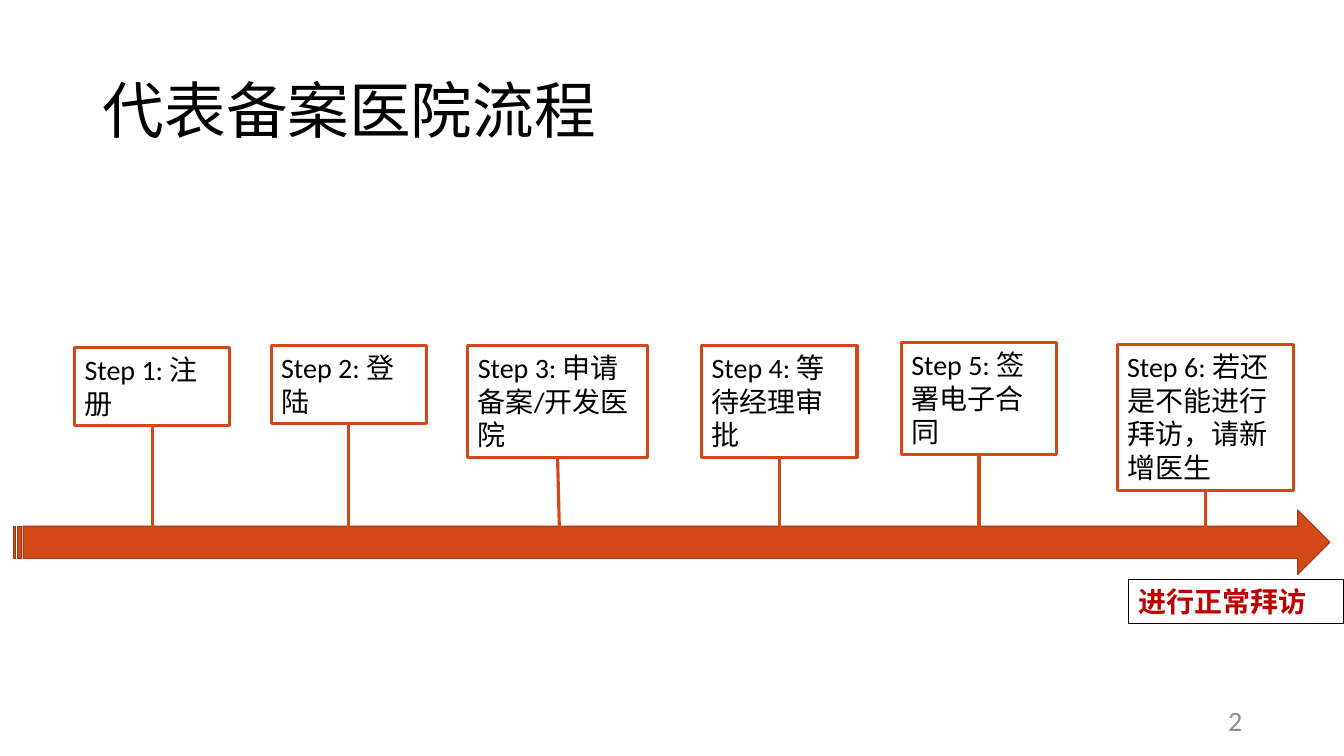
from lxml.etree import SubElement
from pptx import Presentation
from pptx.dml.color import RGBColor
from pptx.enum.shapes import MSO_CONNECTOR, MSO_SHAPE
from pptx.enum.text import MSO_ANCHOR, PP_ALIGN
from pptx.oxml.ns import qn
from pptx.util import Inches, Pt

WIDTH, HEIGHT = 13.33, 7.5
ORANGE, DARK_ORANGE, RED = "D34817", "9C3511", "C00000"
BLACK, WHITE, GREY = "000000", "FFFFFF", "8C8C8C"
LINE_HEIGHT, BOX_PADDING = 0.34, 0.09

# Text, left, top, width, lines of text, sideways lean of the stem
STEPS = [
    ("Step 1: 注册", 0.74, 3.45, 1.54, 2, 0),
    ("Step 2: 登陆", 2.69, 3.43, 1.54, 2, 0),
    ("Step 3: 申请备案/开发医院", 4.64, 3.43, 1.78, 3, 0.02),
    ("Step 4: 等待经理审批", 6.96, 3.43, 1.54, 3, 0),
    ("Step 5: 签署电子合同", 8.94, 3.4, 1.54, 3, 0),
    ("Step 6: 若还是不能进行拜访，请新增医生", 11.08, 3.42, 1.75, 4, 0),
]


def colour(value):
    return RGBColor.from_string(value)


def write(shape, text, size=20, ink=BLACK, bold=False, align=PP_ALIGN.LEFT,
          anchor=MSO_ANCHOR.TOP, spacing=None):
    frame = shape.text_frame
    frame.word_wrap = True
    frame.vertical_anchor = anchor
    para = frame.paragraphs[0]
    para.alignment = align
    para.line_spacing = spacing
    span = para.add_run()
    span.text = text
    span.font.name = "Calibri"
    span.font.size = Pt(size)
    span.font.bold = bold
    span.font.color.rgb = colour(ink)


def add_block(page, box, kind=MSO_SHAPE.RECTANGLE, fill=None, line=BLACK, weight=0.75):
    shape = page.shapes.add_shape(kind, *map(Inches, box))
    shape.shadow.inherit = False
    if fill:
        shape.fill.solid()
        shape.fill.fore_color.rgb = colour(fill)
    else:
        shape.fill.background()
    shape.line.color.rgb = colour(line)
    shape.line.width = Pt(weight)
    return shape


def add_stem(page, start, end):
    stem = page.shapes.add_connector(MSO_CONNECTOR.STRAIGHT, *map(Inches, start + end))
    stem.line.color.rgb = colour(ORANGE)
    stem.line.width = Pt(2.25)
    SubElement(stem._element.spPr, qn("a:effectLst"))


def add_title(page, box, text):
    title = page.shapes.title
    title.left, title.top, title.width, title.height = map(Inches, box)
    write(title, text, size=44, anchor=MSO_ANCHOR.MIDDLE, spacing=0.9)


def add_timeline(page, box, steps):
    left, top, width, height = box
    add_block(page, box, MSO_SHAPE.STRIPED_RIGHT_ARROW, ORANGE, DARK_ORANGE)
    # Each step hangs on a stem that ends inside the arrow
    foot = top + height * 0.4
    for text, step_left, step_top, step_width, lines, lean in steps:
        step_height = BOX_PADDING + lines * LINE_HEIGHT
        middle = step_left + step_width / 2
        add_stem(page, (middle, step_top + step_height), (middle + lean, foot))
        step = add_block(page, (step_left, step_top, step_width, step_height),
                         fill=WHITE, line=ORANGE, weight=2.25)
        write(step, text)


def add_outcome(page, box, text):
    write(add_block(page, box), text, ink=RED, bold=True)


def add_page_number(page, box, number):
    write(page.shapes.add_textbox(*map(Inches, box)), number, ink=GREY,
          align=PP_ALIGN.RIGHT, anchor=MSO_ANCHOR.MIDDLE)


def main():
    deck = Presentation()
    deck.slide_width, deck.slide_height = Inches(WIDTH), Inches(HEIGHT)
    page = deck.slides.add_slide(deck.slide_layouts[5])
    add_title(page, (0.92, 0.4, 11.5, 1.45), "代表备案医院流程")
    add_page_number(page, (9.42, 6.95, 3, 0.4), "2")
    add_timeline(page, (0.13, 5.06, 13.06, 0.64), STEPS)
    add_outcome(page, (11.19, 5.75, 2.14, 0.44), "进行正常拜访")
    deck.save("out.pptx")


if __name__ == "__main__":
    main()
